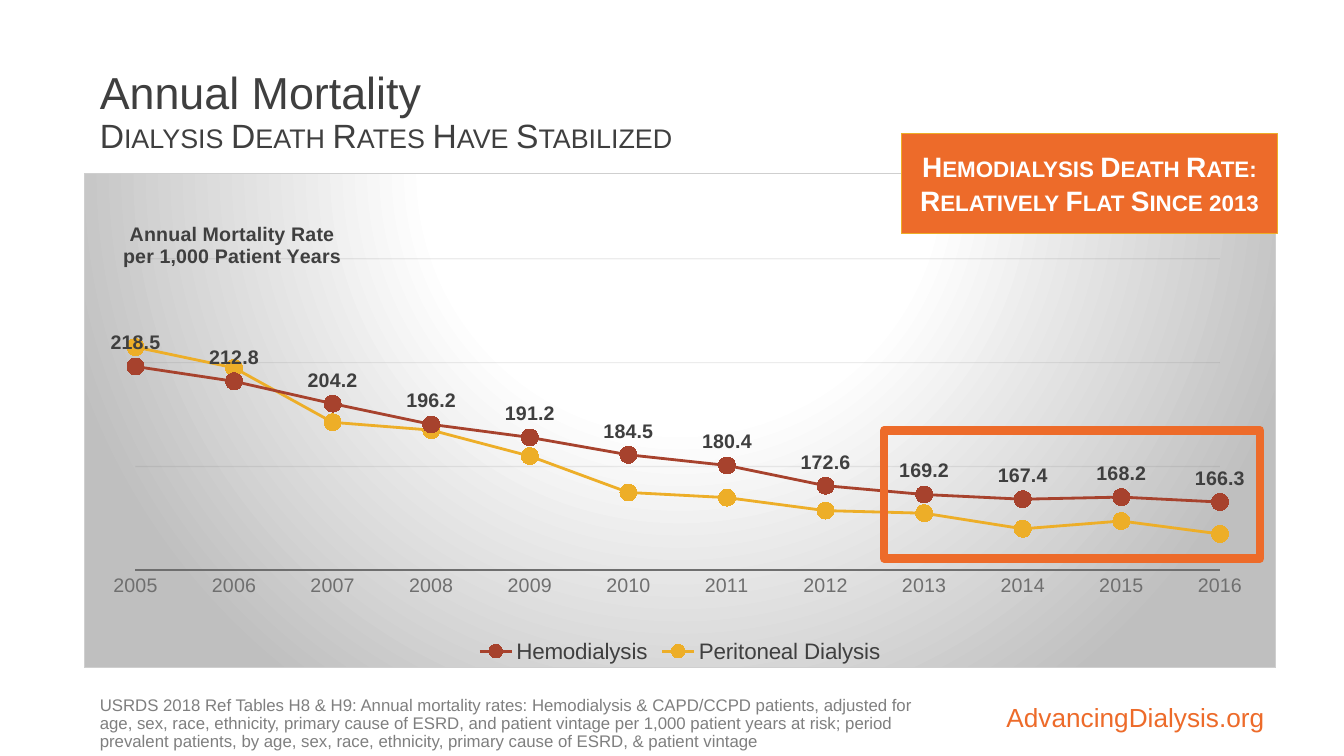
from dataclasses import dataclass
from typing import Optional

from lxml import etree
from pptx import Presentation
from pptx import util as u
from pptx.chart.data import XyChartData
from pptx.chart.datalabel import DataLabels
from pptx.dml.color import RGBColor
from pptx.enum import chart as ch
from pptx.enum import shapes, text
from pptx.oxml import parse_xml
from pptx.oxml.ns import nsdecls, qn

FONT = "Arial"
INK, GREY, ORANGE, GOLD, RUST = "3F3F3F", "6F6F6F", "ED6B2A", "EDAE28", "A7422D"
FIRST_YEAR, LAST_YEAR = 2005, 2016


@dataclass
class Area:
    """Left, top, width and height as percentages of the slide."""
    x: float
    y: float
    w: float
    h: float


@dataclass
class Run:
    text: str
    size: float
    color: str
    bold: bool = False
    small_caps: bool = False


@dataclass
class Series:
    name: str
    color: str
    labelled: bool
    rates: list[float]


SERIES = [
    Series("Hemodialysis", RUST, True,
           [218.5, 212.8, 204.2, 196.2, 191.2, 184.5, 180.4, 172.6, 169.2, 167.4, 168.2, 166.3]),
    Series("Peritoneal Dialysis", GOLD, False,
           [226, 218, 197, 194, 184, 170, 168, 163, 162, 156, 159, 154]),
]

prs = Presentation()
prs.slide_width, prs.slide_height = u.Inches(13.33), u.Inches(7.5)
s = prs.slides.add_slide(prs.slide_layouts[1])


def rgb(color: str) -> RGBColor:
    return RGBColor.from_string(color)


def place(area: Area) -> tuple[int, int, int, int]:
    w, h = prs.slide_width / 100, prs.slide_height / 100
    return int(area.x * w), int(area.y * h), int(area.w * w), int(area.h * h)


def style(font, size: float, color: str, bold: bool = False) -> None:
    font.name, font.size, font.bold = FONT, u.Pt(size), bold
    font.color.rgb = rgb(color)


def stroke(line, color: str, width: float) -> None:
    line.color.rgb = rgb(color)
    line.width = u.Pt(width)


def write(sp, lines: list[Run], align, anchor, spacing: float = 1.0,
          inset: tuple[float, float] = (0.07, 0.04)) -> None:
    """Fill one paragraph, with a line break between the runs."""
    tf = sp.text_frame
    tf.word_wrap, tf.auto_size, tf.vertical_anchor = True, text.MSO_AUTO_SIZE.NONE, anchor
    tf.margin_left = tf.margin_right = u.Inches(inset[0])
    tf.margin_top = tf.margin_bottom = u.Inches(inset[1])
    p = tf.paragraphs[0]
    p.alignment, p.line_spacing, p.space_before = align, spacing, u.Pt(0)
    for i, line in enumerate(lines):
        if i:
            p.add_line_break()
        r = p.add_run()
        r.text = line.text
        style(r.font, line.size, line.color, line.bold)
        if line.small_caps:
            r._r.get_or_add_rPr().set("cap", "small")


def move(sp, area: Area) -> None:
    sp.left, sp.top, sp.width, sp.height = place(area)


def add_box(area: Area, fill: Optional[str], line: str, width: float):
    sp = s.shapes.add_shape(shapes.MSO_SHAPE.RECTANGLE, *place(area))
    sp.shadow.inherit = False
    if fill:
        sp.fill.solid()
        sp.fill.fore_color.rgb = rgb(fill)
    else:
        sp.fill.background()
    stroke(sp.line, line, width)
    return sp


def set_layout(element, **values) -> None:
    """Give a chart part a fixed place, in shares of the chart."""
    layout = element.find(qn("c:layout"))
    if layout is None:
        layout = etree.Element(qn("c:layout"))
        tx = element.find(qn("c:tx"))
        element.insert(0 if tx is None else 1, layout)
    manual = etree.SubElement(layout, qn("c:manualLayout"))
    for tag, value in values.items():
        etree.SubElement(manual, qn(f"c:{tag}")).set("val", str(value))


def add_mortality_chart(area: Area) -> None:
    data = XyChartData()
    for item in SERIES:
        points = data.add_series(item.name)
        for year, rate in enumerate(item.rates, FIRST_YEAR):
            points.add_data_point(year, rate)
    chart = s.shapes.add_chart(ch.XL_CHART_TYPE.XY_SCATTER_LINES, *place(area), data).chart
    style(chart.font, 10, INK)
    chart.has_title = False
    chart.has_legend = True
    chart.legend.position = ch.XL_LEGEND_POSITION.BOTTOM
    chart.legend.include_in_layout = False
    style(chart.legend.font, 16, INK)

    # Series and labels
    plot = chart.plots[0]
    plot.vary_by_categories = False
    for item, ser in zip(SERIES, plot.series):
        stroke(ser.format.line, item.color, 2)
        ser.marker.style, ser.marker.size = ch.XL_MARKER_STYLE.CIRCLE, 12
        ser.marker.format.fill.solid()
        ser.marker.format.fill.fore_color.rgb = rgb(item.color)
        stroke(ser.marker.format.line, item.color, 0.75)
        if item.labelled:
            labels = DataLabels(ser._element.get_or_add_dLbls())
            labels.show_value = True
            labels.position = ch.XL_LABEL_POSITION.ABOVE
            style(labels.font, 14, INK, True)

    # Axes
    years, rates = chart.category_axis, chart.value_axis
    years.minimum_scale, years.maximum_scale, years.major_unit = FIRST_YEAR, LAST_YEAR, 1
    years.has_major_gridlines = False
    years.major_tick_mark = ch.XL_TICK_MARK.NONE
    years.tick_labels.number_format = "0"
    years.tick_labels.number_format_is_linked = False
    style(years.tick_labels.font, 14, GREY)
    stroke(years.format.line, GREY, 1.5)
    rates.minimum_scale, rates.maximum_scale, rates.major_unit = 140, 260, 40
    rates.tick_label_position = ch.XL_TICK_LABEL_POSITION.NONE
    rates.format.line.fill.background()
    rates.has_major_gridlines = True
    stroke(rates.major_gridlines.format.line, "494949", 0.75)
    for color in chart.element.xpath(".//c:majorGridlines//a:srgbClr"):
        etree.SubElement(color, qn("a:alpha")).set("val", "10000")

    # Axis title, set level above the plot
    tf = rates.axis_title.text_frame
    for i, line in enumerate(["Annual Mortality Rate", "per 1,000 Patient Years"]):
        p = tf.add_paragraph() if i else tf.paragraphs[0]
        r = p.add_run()
        r.text = line
        style(r.font, 14, INK, True)
    tf._txBody.bodyPr.set("rot", "0")
    tf._txBody.bodyPr.set("vert", "horz")
    set_layout(rates.axis_title._element, xMode="edge", yMode="edge", x=0.03, y=0.09)
    set_layout(chart.element.find(".//" + qn("c:plotArea")), layoutTarget="inner",
               xMode="edge", yMode="edge", x=0.043, y=0.172, w=0.91, h=0.631)

    # Radial background
    stops = "".join(f'<a:gs pos="{pos}"><a:srgbClr val="{color}"/></a:gs>' for pos, color in
                    [(0, "FFFFFF"), (39000, "FFFFFF"), (100000, "BFBFBF")])
    chart.element.find(qn("c:chart")).addnext(parse_xml(
        f'<c:spPr {nsdecls("c", "a")}><a:gradFill><a:gsLst>{stops}</a:gsLst>'
        '<a:path path="circle"><a:fillToRect l="50000" t="-80000" r="50000" b="180000"/></a:path>'
        '</a:gradFill><a:ln w="9525"><a:solidFill><a:srgbClr val="CFCFCF"/></a:solidFill></a:ln>'
        '</c:spPr>'))


LEFT, CENTER, RIGHT = text.PP_ALIGN.LEFT, text.PP_ALIGN.CENTER, text.PP_ALIGN.RIGHT
TOP, MIDDLE, BOTTOM = text.MSO_ANCHOR.TOP, text.MSO_ANCHOR.MIDDLE, text.MSO_ANCHOR.BOTTOM

# Title
title = s.shapes.title
move(title, Area(6.9, 5.33, 55.89, 19.33))
write(title, [Run("Annual Mortality", 32, INK),
              Run("Dialysis Death Rates Have Stabilized", 24, INK, small_caps=True)],
      LEFT, MIDDLE, 0.9)

# Source note
note = s.placeholders[1]
move(note, Area(6.9, 91.6, 62.87, 8.4))
pPr = note.text_frame.paragraphs[0]._p.get_or_add_pPr()
pPr.set("marL", "0")
pPr.set("indent", "0")
etree.SubElement(pPr, qn("a:buNone"))
write(note, [Run("USRDS 2018 Ref Tables H8 & H9: Annual mortality rates: Hemodialysis & CAPD/CCPD "
                 "patients, adjusted for age, sex, race, ethnicity, primary cause of ESRD, and "
                 "patient vintage per 1,000 patient years at risk; period prevalent patients, by "
                 "age, sex, race, ethnicity, primary cause of ESRD, & patient vintage",
                 12, "7F7F7F")], LEFT, TOP, 0.9)

# Web address
site = s.shapes.add_textbox(*place(Area(60.92, 88.8, 33.98, 8.13)))
write(site, [Run("AdvancingDialysis.org", 18.7, ORANGE)], RIGHT, BOTTOM, 0.9, (0.11, 0))

# Chart, highlight frame and callout
add_mortality_chart(Area(6.23, 22.93, 88.75, 65.47))
add_box(Area(65.79, 56.93, 27.98, 16.93), None, ORANGE, 6)
callout = add_box(Area(67.07, 17.6, 27.98, 13.33), ORANGE, GOLD, 0.5)
write(callout, [Run("Hemodialysis Death Rate: Relatively Flat Since 2013", 20, "FFFFFF", True, True)],
      CENTER, MIDDLE, inset=(0.1, 0.05))

prs.save("out.pptx")
